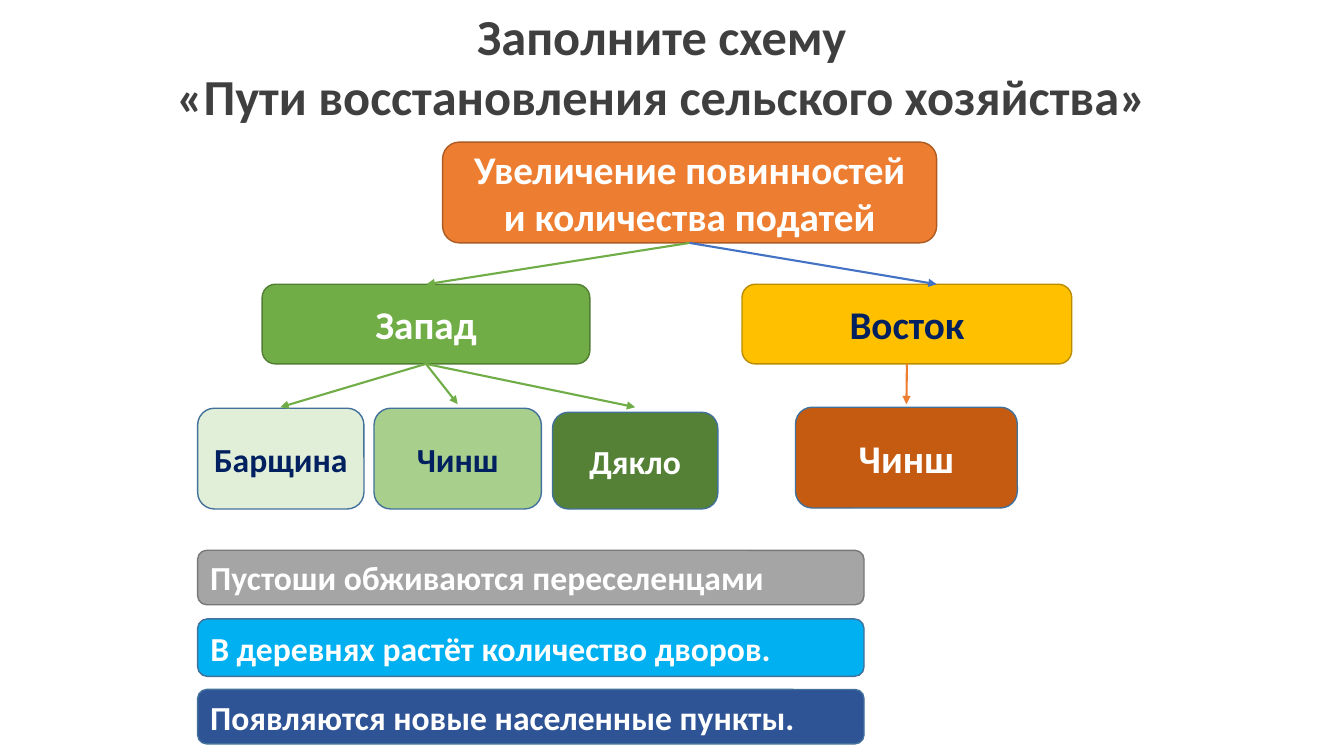
from lxml.etree import SubElement
from pptx import Presentation
from pptx.dml.color import RGBColor
from pptx.enum.shapes import MSO_CONNECTOR, MSO_SHAPE
from pptx.enum.text import MSO_ANCHOR, MSO_AUTO_SIZE, PP_ALIGN
from pptx.oxml.ns import qn
from pptx.util import Inches, Pt

FONT = "Calibri"
WHITE, NAVY, BLUE_EDGE = "FFFFFF", "002060", "42719B"

TITLE = ["Заполните схему", "«Пути восстановления сельского хозяйства»"]

# name: (lines, (left, top, width, height), fill, edge, text colour, size)
BOXES = {
    "root": (["Увеличение повинностей", "и количества податей"],
             (4.39, 1.41, 4.9, 1), "ED7D31", "AC5B23", WHITE, 28),
    "west": (["Запад"], (2.6, 2.82, 3.25, 0.79), "70AD47", "517E33", WHITE, 28),
    "east": (["Восток"], (7.36, 2.82, 3.27, 0.79), "FFC000", "BA8C00", NAVY, 28),
    "corvee": (["Барщина"], (1.96, 4.05, 1.65, 1), "E1EFD8", BLUE_EDGE, NAVY, 24),
    "west rent": (["Чинш"], (3.71, 4.05, 1.66, 1), "A8D08C", BLUE_EDGE, NAVY, 24),
    "grain tax": (["Дякло"], (5.48, 4.09, 1.64, 0.96), "548135", BLUE_EDGE, WHITE, 24),
    "east rent": (["Чинш"], (7.89, 4.04, 2.2, 1), "C55A11", BLUE_EDGE, WHITE, 28),
}

# text, top, height, fill, edge
RESULTS = [
    ("Пустоши обживаются переселенцами", 5.46, 0.54, "A5A5A5", "787878"),
    ("В деревнях растёт количество дворов.", 6.14, 0.57, "00B0F0", BLUE_EDGE),
    ("Появляются новые населенные пункты.", 6.84, 0.54, "2F5496", BLUE_EDGE),
]
RESULT_LEFT, RESULT_WIDTH = 1.96, 6.61

# parent box, arrow tip, colour
ARROWS = [
    ("root", (4.23, 2.82), "70AD47"),
    ("root", (9.29, 2.82), "4472C4"),
    ("west", (2.78, 4.04), "70AD47"),
    ("west", (4.54, 4.01), "70AD47"),
    ("west", (6.3, 4.04), "70AD47"),
    ("east", (8.99, 4.01), "ED7D31"),
]


def rgb(value):
    return RGBColor.from_string(value)


def write(tf, lines, size, color, align):
    tf.word_wrap = True
    for i, line in enumerate(lines):
        p = tf.add_paragraph() if i else tf.paragraphs[0]
        p.alignment = align
        r = p.add_run()
        r.text = line
        r.font.name, r.font.size, r.font.bold = FONT, Pt(size), True
        r.font.color.rgb = rgb(color)


def add_box(s, lines, place, fill, edge, color, size, align=PP_ALIGN.CENTER):
    sp = s.shapes.add_shape(MSO_SHAPE.ROUNDED_RECTANGLE, *map(Inches, place))
    sp.shadow.inherit = False
    sp.fill.solid()
    sp.fill.fore_color.rgb = rgb(fill)
    sp.line.color.rgb = rgb(edge)
    sp.line.width = Pt(1)
    sp.text_frame.vertical_anchor = MSO_ANCHOR.MIDDLE
    write(sp.text_frame, lines, size, color, align)


def add_arrow(s, start, end, color):
    line = s.shapes.add_connector(MSO_CONNECTOR.STRAIGHT, *map(Inches, start + end))
    line.line.color.rgb = rgb(color)
    line.line.width = Pt(1.5)
    SubElement(line.line._get_or_add_ln(), qn("a:tailEnd"), type="triangle")
    SubElement(line._element.spPr, qn("a:effectLst"))


def main():
    prs = Presentation()
    prs.slide_width, prs.slide_height = Inches(13.33), Inches(7.5)
    s = prs.slides.add_slide(prs.slide_layouts[5])

    # Title
    title = s.shapes.title
    title.left, title.top = Inches(1.61), Inches(0)
    title.width, title.height = Inches(9.91), Inches(1.31)
    title.text_frame.auto_size = MSO_AUTO_SIZE.NONE
    title.text_frame.vertical_anchor = MSO_ANCHOR.TOP
    write(title.text_frame, TITLE, 36, "3F3F3F", PP_ALIGN.CENTER)

    # Scheme boxes
    for box in BOXES.values():
        add_box(s, *box)

    # Result bars
    for text, top, height, fill, edge in RESULTS:
        place = (RESULT_LEFT, top, RESULT_WIDTH, height)
        add_box(s, [text], place, fill, edge, WHITE, 24, PP_ALIGN.LEFT)

    # Arrows leave the middle of the parent's bottom edge
    for parent, tip, color in ARROWS:
        left, top, width, height = BOXES[parent][1]
        add_arrow(s, (left + width / 2, top + height), tip, color)

    prs.save("out.pptx")


if __name__ == "__main__":
    main()
